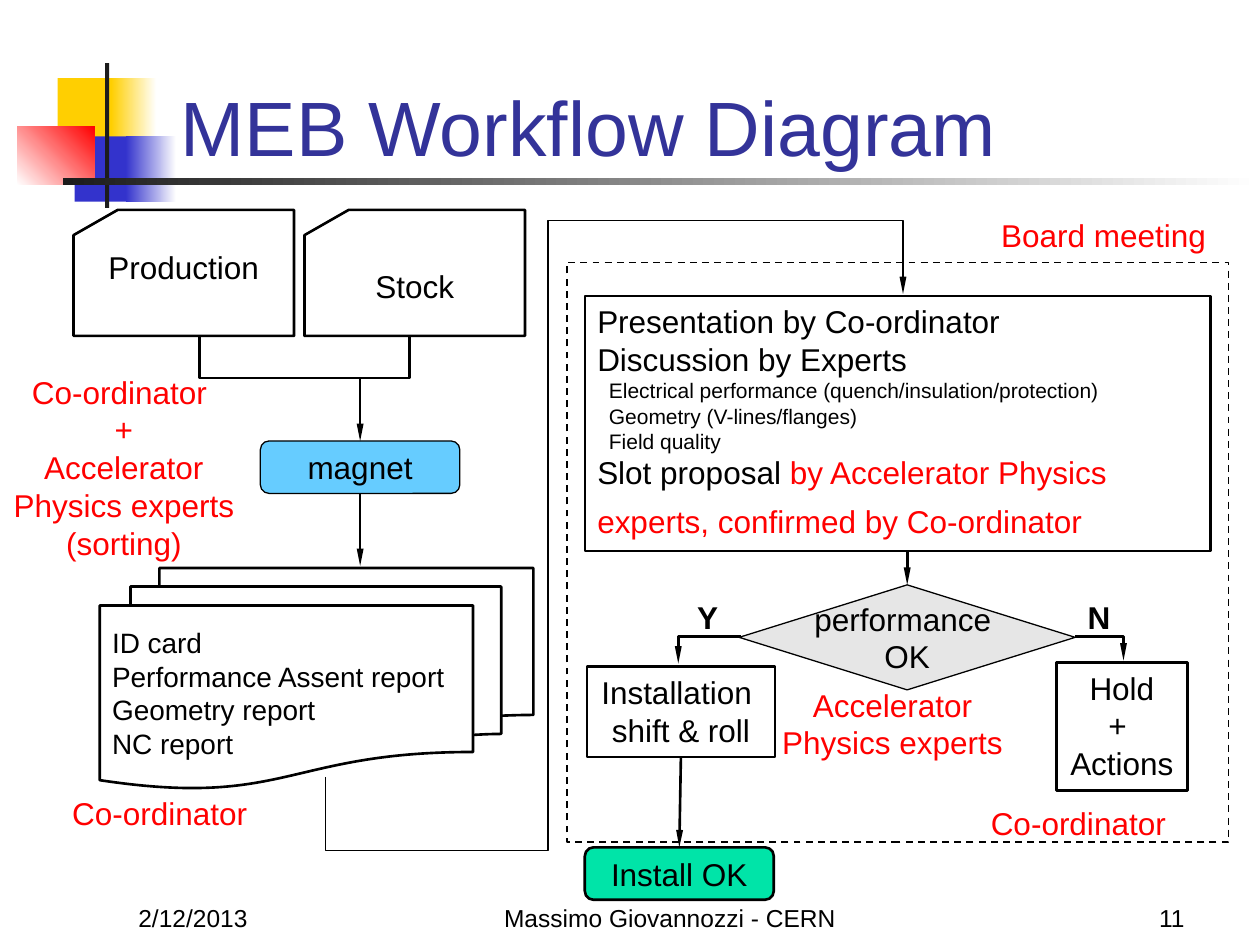
from dataclasses import dataclass
from typing import NamedTuple, Optional

import lxml.etree
import pptx
import pptx.dml.color
import pptx.enum.dml
import pptx.enum.shapes
import pptx.enum.text
import pptx.oxml.ns
import pptx.util

RGB = pptx.dml.color.RGBColor
BLACK = RGB(0x00, 0x00, 0x00)
WHITE = RGB(0xFF, 0xFF, 0xFF)
RED = RGB(0xFF, 0x00, 0x00)
YELLOW = RGB(0xFF, 0xCF, 0x01)
BLUE = RGB(0x33, 0x33, 0xCC)
CHARCOAL = RGB(0x1C, 0x1C, 0x1C)
TITLE_BLUE = RGB(0x33, 0x33, 0x99)
GREY = RGB(0xE6, 0xE6, 0xE6)
SKY = RGB(0x66, 0xCC, 0xFF)
GREEN = RGB(0x00, 0xE4, 0xA8)

SHAPE = pptx.enum.shapes.MSO_SHAPE
ALIGN = pptx.enum.text.PP_ALIGN
ANCHOR = pptx.enum.text.MSO_ANCHOR
FIT = pptx.enum.text.MSO_AUTO_SIZE
COLUMNS, ROWS = 120, 90
WIDTH, HEIGHT = pptx.util.Inches(10), pptx.util.Inches(7.5)
TOP, BOTTOM = 0, 2


class Area(NamedTuple):
    column: float
    row: float
    columns: float
    rows: float


class Run(NamedTuple):
    text: str
    size: float = 18
    colour: RGB = BLACK
    bold: bool = False


class Line(NamedTuple):
    runs: tuple
    indent: float = 0


class Band(NamedTuple):
    area: Area
    start: RGB
    end: Optional[RGB] = None
    angle: float = 0


@dataclass
class Node:
    area: Area
    lines: tuple = ()
    kind: Optional[SHAPE] = None
    fill: Optional[RGB] = None
    weight: float = 1.5
    dashed: bool = False
    align: ALIGN = ALIGN.CENTER
    anchor: ANCHOR = ANCHOR.TOP
    wrap: bool = False
    grow: bool = False
    bottom: float = 0.05


def across(columns: float) -> int:
    return round(WIDTH * columns / COLUMNS)


def down(rows: float) -> int:
    return round(HEIGHT * rows / ROWS)


def place(area: Area) -> tuple:
    return across(area.column), down(area.row), across(area.columns), down(area.rows)


def lines(*texts: str, size: float = 18, colour: RGB = BLACK, bold: bool = False, indent: float = 0) -> tuple:
    return tuple(Line((Run(text, size, colour, bold),), indent) for text in texts)


def write(frame, content: tuple, align: ALIGN) -> None:
    for index, line in enumerate(content):
        paragraph = frame.add_paragraph() if index else frame.paragraphs[0]
        paragraph.alignment = align
        if line.indent:
            paragraph._p.get_or_add_pPr().set("marL", str(pptx.util.Pt(line.indent)))
        for part in line.runs:
            run = paragraph.add_run()
            run.text = part.text
            run.font.name = "Arial"
            run.font.size = pptx.util.Pt(part.size)
            run.font.bold = part.bold
            run.font.color.rgb = part.colour


def draw_band(slide, band: Band) -> None:
    shape = slide.shapes.add_shape(SHAPE.RECTANGLE, *place(band.area))
    shape.shadow.inherit = False
    shape.line.fill.background()
    if band.end is None:
        shape.fill.solid()
        shape.fill.fore_color.rgb = band.start
        return
    shape.fill.gradient()
    shape.fill.gradient_angle = band.angle
    for stop, colour in zip(shape.fill.gradient_stops, (band.start, band.end)):
        stop.color.rgb = colour


def draw_node(slide, node: Node):
    if node.kind is None:
        shape = slide.shapes.add_textbox(*place(node.area))
    else:
        shape = slide.shapes.add_shape(node.kind, *place(node.area))
        shape.shadow.inherit = False
        shape.line.color.rgb = BLACK
        shape.line.width = pptx.util.Pt(node.weight)
        if node.dashed:
            shape.line.dash_style = pptx.enum.dml.MSO_LINE.DASH
        if node.fill is None:
            shape.fill.background()
        else:
            shape.fill.solid()
            shape.fill.fore_color.rgb = node.fill
    frame = shape.text_frame
    frame.word_wrap = node.wrap
    frame.auto_size = FIT.SHAPE_TO_FIT_TEXT if node.grow else FIT.NONE
    frame.vertical_anchor = node.anchor
    frame.margin_bottom = pptx.util.Inches(node.bottom)
    write(frame, node.lines, node.align)
    return shape


def style_route(route, weight: float, arrow: bool) -> None:
    route.line.color.rgb = BLACK
    route.line.width = pptx.util.Pt(weight)
    if arrow:
        lxml.etree.SubElement(route.line._get_or_add_ln(), pptx.oxml.ns.qn("a:tailEnd"),
                              type="triangle", w="sm", len="lg")


def draw_route(slide, points: tuple, weight: float = 1.5, arrow: bool = True) -> None:
    corners = [(across(column), down(row)) for column, row in points]
    builder = slide.shapes.build_freeform(*corners[0])
    builder.add_line_segments(corners[1:], close=False)
    route = builder.convert_to_shape()
    route.shadow.inherit = False
    route.fill.background()
    style_route(route, weight, arrow)


def draw_arrow(slide, start: tuple, end: tuple, source=None, target=None) -> None:
    arrow = slide.shapes.add_connector(pptx.enum.shapes.MSO_CONNECTOR.STRAIGHT,
                                       across(start[0]), down(start[1]), across(end[0]), down(end[1]))
    if source is not None:
        arrow.begin_connect(source, BOTTOM)
    if target is not None:
        arrow.end_connect(target, TOP)
    style_route(arrow, 1.5, True)
    lxml.etree.SubElement(arrow._element.spPr, pptx.oxml.ns.qn("a:effectLst"))


BANDS = (
    Band(Area(5.5, 7.45, 5.75, 6.2), YELLOW),
    Band(Area(10.6, 7.45, 4.3, 6.2), YELLOW, WHITE),
    Band(Area(7.1, 13, 5.5, 6.2), BLUE),
    Band(Area(12, 13, 4.8, 6.2), BLUE, WHITE),
    Band(Area(1.65, 12, 7.35, 5.6), WHITE, RED, 45),
    Band(Area(10, 6, 0.4, 13.8), CHARCOAL),
    Band(Area(6, 17, 114, 0.6), CHARCOAL, WHITE),
)
MIDDLE = ANCHOR.MIDDLE
AGENDA = (
    *lines("Presentation by Co-ordinator", "Discussion by Experts"),
    *lines("Electrical performance (quench/insulation/protection)", "Geometry (V-lines/flanges)",
           "Field quality", size=12, indent=6.67),
    Line((Run("Slot proposal "), Run("by Accelerator Physics experts, confirmed by Co-ordinator", colour=RED),
          Run(" ", 24))),
)
NODES = {
    "decision": Node(Area(70.4, 55.7, 32, 10), lines("performance ", "OK"), SHAPE.FLOWCHART_DECISION,
                     GREY, 0.75, anchor=MIDDLE),
    "reports": Node(Area(9.5, 54.1, 41.3, 21),
                    lines("ID card", "Performance Assent report", "Geometry report", "NC report", size=16),
                    SHAPE.FLOWCHART_MULTIDOCUMENT, WHITE, align=ALIGN.LEFT, anchor=MIDDLE),
    "magnet": Node(Area(24.8, 42, 19, 5), lines("magnet"), SHAPE.FLOWCHART_ALTERNATE_PROCESS,
                   SKY, 0.75, anchor=MIDDLE),
    "production": Node(Area(7, 20, 21, 12), lines("Production"), SHAPE.FLOWCHART_CARD, WHITE,
                       anchor=MIDDLE, bottom=0.34),
    "stock": Node(Area(29, 20, 21, 12), lines("Stock"), SHAPE.FLOWCHART_CARD, WHITE, anchor=MIDDLE),
    "sorting": Node(Area(-2.2, 34.9, 28, 19.2),
                    lines("Co-ordinator ", "+", "Accelerator Physics experts (sorting)", colour=RED),
                    wrap=True, grow=True),
    "report owner": Node(Area(4.2, 75, 22, 4.8), lines("Co-ordinator", colour=RED), wrap=True, grow=True),
    "agenda": Node(Area(55.7, 28.2, 59.6, 24.3), AGENDA, SHAPE.RECTANGLE, align=ALIGN.LEFT, wrap=True, grow=True),
    "installation": Node(Area(55.9, 63.5, 17.9, 8.6), lines("Installation ", "shift & roll"),
                         SHAPE.RECTANGLE, grow=True),
    "decision owner": Node(Area(72.6, 64.7, 24.8, 8.4), lines("Accelerator Physics experts", colour=RED),
                           wrap=True, grow=True),
    "meeting": Node(Area(94.1, 20, 22, 4.8), lines("Board meeting", colour=RED), grow=True),
    "meeting frame": Node(Area(54, 25, 63, 55.2), kind=SHAPE.RECTANGLE, weight=1, dashed=True),
    "yes": Node(Area(65.2, 56.4, 4.4, 4.8), lines("Y", bold=True), align=ALIGN.LEFT, grow=True),
    "install": Node(Area(55.7, 80.7, 18, 5), lines("Install OK"), SHAPE.FLOWCHART_ALTERNATE_PROCESS,
                    GREEN, anchor=MIDDLE),
    "hold": Node(Area(100.6, 63.1, 12.5, 12.2), lines("Hold", "+ ", "Actions"), SHAPE.RECTANGLE, grow=True),
    "hold owner": Node(Area(91.4, 76, 22.6, 4.8), lines("Co-ordinator", colour=RED), wrap=True, grow=True),
    "no": Node(Area(102.4, 56.4, 4.6, 4.8), lines("N", bold=True), align=ALIGN.LEFT, grow=True),
}
FOOTERS = (
    (12, 25, "2/12/2013", ALIGN.LEFT),
    (44.8, 38, "Massimo Giovannozzi - CERN", ALIGN.CENTER),
    (89, 25, "11", ALIGN.RIGHT),
)


def main() -> None:
    deck = pptx.Presentation()
    deck.slide_width, deck.slide_height = WIDTH, HEIGHT
    slide = deck.slides.add_slide(deck.slide_layouts[5])
    for band in BANDS:
        draw_band(slide, band)

    title = slide.shapes.title
    title.left, title.top, title.width, title.height = place(Area(16, 2, 103.3, 15))
    title.text_frame.vertical_anchor = ANCHOR.BOTTOM
    title.text_frame.auto_size = FIT.NONE
    write(title.text_frame, lines("MEB Workflow Diagram", size=44, colour=TITLE_BLUE), ALIGN.LEFT)

    for column, columns, text, align in FOOTERS:
        draw_node(slide, Node(Area(column, 83.4, columns, 6), lines(text, size=14),
                              align=align, anchor=ANCHOR.BOTTOM, wrap=True))
    drawn = {name: draw_node(slide, node) for name, node in NODES.items()}

    draw_route(slide, ((19, 32), (19, 36), (39, 36), (39, 32)), arrow=False)
    draw_route(slide, ((31, 74), (31, 81), (52.2, 81), (52.2, 21), (86, 21), (86, 28)), weight=1)
    draw_route(slide, ((70.6, 60.6), (64.6, 60.6), (64.6, 63.2)))
    draw_route(slide, ((102.4, 60.6), (107, 60.6), (107, 62.9)))
    draw_arrow(slide, (34.3, 36), (34.3, 42), target=drawn["magnet"])
    draw_arrow(slide, (34.3, 47), (34.3, 53.9), source=drawn["magnet"])
    draw_arrow(slide, (86.4, 52.5), (86.4, 55.7), target=drawn["decision"])
    draw_arrow(slide, (64.8, 72.1), (64.7, 80.7), drawn["installation"], drawn["install"])
    deck.save("out.pptx")


if __name__ == "__main__":
    main()
